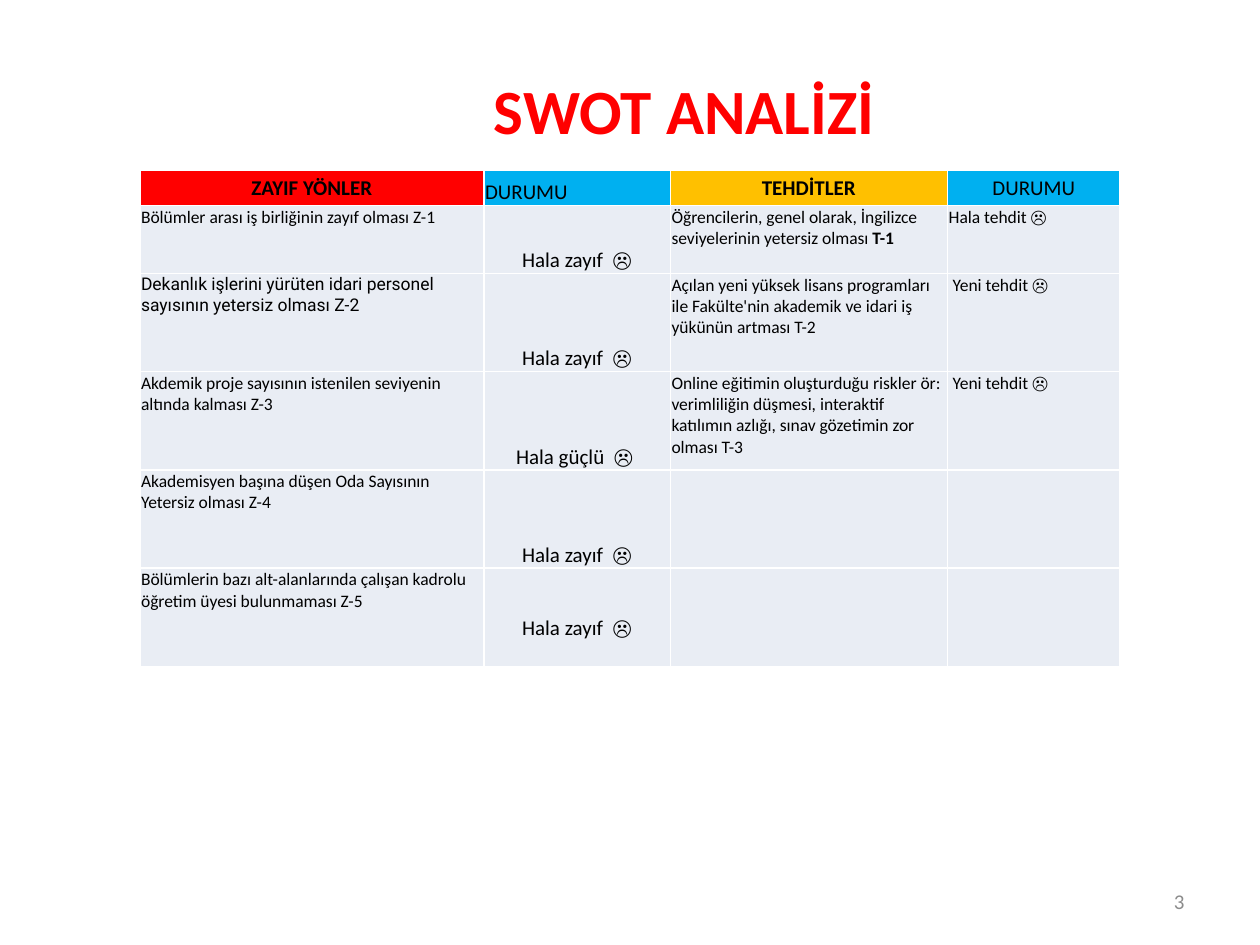
from dataclasses import dataclass

from lxml import etree
from pptx import Presentation
from pptx import util as u
from pptx.dml.color import RGBColor
from pptx.enum import text
from pptx.oxml import ns

COLORS = {
    "red": "FF0000", "blue": "00B0F0", "amber": "FFC000",
    "body": "E9EDF4", "border": "FFFFFF", "text": "000000", "number": "8C8C8C",
}
TOP, MIDDLE, BOTTOM = (text.MSO_ANCHOR.TOP, text.MSO_ANCHOR.MIDDLE,
                       text.MSO_ANCHOR.BOTTOM)
LEFT, CENTER, RIGHT = text.PP_ALIGN.LEFT, text.PP_ALIGN.CENTER, text.PP_ALIGN.RIGHT


@dataclass
class Entry:
    words: str
    bold_tail: str = ""
    size: int = 10
    bold: bool = False
    font: str = "Calibri"
    align: text.PP_ALIGN = LEFT
    anchor: text.MSO_ANCHOR = TOP
    fill: str = "body"
    bottom: float = 0


def header(words: str, fill: str, bold: bool = False, align=CENTER,
           anchor=MIDDLE) -> Entry:
    return Entry(words, size=12, bold=bold, align=align, anchor=anchor, fill=fill)


def status(words: str, bottom: float = 0) -> Entry:
    return Entry(words, size=12, align=CENTER, anchor=BOTTOM, bottom=bottom)


COLUMNS = [2.73, 1.48, 2.2, 1.37]
ROW_HEIGHTS = [0.28, 0.54] + [0.78] * 4
ROWS = [
    [header("ZAYIF YÖNLER", "red", bold=True),
     header("DURUMU", "blue", align=LEFT, anchor=BOTTOM),
     header("TEHDİTLER", "amber", bold=True),
     header("DURUMU", "blue")],
    [Entry("Bölümler arası iş birliğinin zayıf olması Z-1"),
     status("Hala zayıf  ☹"),
     Entry("Öğrencilerin, genel olarak, İngilizce seviyelerinin yetersiz olması ",
           bold_tail="T-1"),
     Entry("Hala tehdit ☹")],
    [Entry("Dekanlık işlerini yürüten idari personel sayısının yetersiz olması Z-2",
           font="Roboto"),
     status("Hala zayıf  ☹"),
     Entry("Açılan yeni yüksek lisans programları ile Fakülte'nin akademik ve "
           "idari iş yükünün artması T-2"),
     Entry(" Yeni tehdit ☹")],
    [Entry("Akdemik proje sayısının istenilen seviyenin altında kalması Z-3"),
     status("Hala güçlü  ☹ "),
     Entry("Online eğitimin oluşturduğu riskler ör: verimliliğin düşmesi, "
           "interaktif katılımın azlığı, sınav gözetimin zor olması T-3"),
     Entry(" Yeni tehdit ☹")],
    [Entry("Akademisyen başına düşen Oda Sayısının Yetersiz olması Z-4"),
     status("Hala zayıf  ☹"), Entry(""), Entry("")],
    [Entry("Bölümlerin bazı alt-alanlarında çalışan kadrolu öğretim üyesi "
           "bulunmaması Z-5"),
     status("Hala zayıf  ☹", bottom=0.2), Entry(""), Entry("")],
]


def style(para, size: int, color: str, font: str = "Calibri", bold: bool = False,
          align=LEFT) -> None:
    para.alignment = align
    para.font.size = u.Pt(size)
    para.font.name = font
    para.font.bold = bold
    para.font.color.rgb = RGBColor.from_string(COLORS[color])


def place(box, left: float, top: float, width: float, height: float) -> None:
    box.left, box.top = u.Inches(left), u.Inches(top)
    box.width, box.height = u.Inches(width), u.Inches(height)


def add_borders(cell) -> None:
    properties = cell._tc.get_or_add_tcPr()
    for side in ("a:lnL", "a:lnR", "a:lnT", "a:lnB"):
        line = etree.SubElement(properties, ns.qn(side), w=str(u.Pt(1)))
        solid = etree.SubElement(line, ns.qn("a:solidFill"))
        etree.SubElement(solid, ns.qn("a:srgbClr"), val=COLORS["border"])


def fill_cell(cell, entry: Entry) -> None:
    add_borders(cell)
    cell.fill.solid()
    cell.fill.fore_color.rgb = RGBColor.from_string(COLORS[entry.fill])
    cell.margin_left = cell.margin_right = cell.margin_top = u.Inches(0.01)
    cell.margin_bottom = u.Inches(entry.bottom)
    cell.vertical_anchor = entry.anchor
    para = cell.text_frame.paragraphs[0]
    if entry.words:
        para.add_run().text = entry.words
    if entry.bold_tail:
        span = para.add_run()
        span.text = entry.bold_tail
        span.font.bold = True
    style(para, entry.size, "text", entry.font, entry.bold, entry.align)


def main() -> None:
    deck = Presentation()
    deck.slide_width, deck.slide_height = u.Inches(10), u.Inches(7.5)
    page = deck.slides.add_slide(deck.slide_layouts[5])

    # Title
    title = page.shapes.title
    place(title, 1.61, 0.52, 7.64, 0.71)
    title.text_frame.text = "SWOT ANALİZİ"
    title.text_frame.vertical_anchor = TOP
    style(title.text_frame.paragraphs[0], 36, "red", bold=True, align=CENTER)

    # Weaknesses and threats table
    table = page.shapes.add_table(
        len(ROWS), len(COLUMNS), u.Inches(1.11), u.Inches(1.35),
        u.Inches(sum(COLUMNS)), u.Inches(sum(ROW_HEIGHTS))).table
    table.first_row = table.horz_banding = False
    for column, width in zip(table.columns, COLUMNS):
        column.width = u.Inches(width)
    for row, height, entries in zip(table.rows, ROW_HEIGHTS, ROWS):
        row.height = u.Inches(height)
        for cell, entry in zip(row.cells, entries):
            fill_cell(cell, entry)

    # Page number
    number = page.shapes.add_textbox(0, 0, 0, 0)
    place(number, 7.17, 6.95, 2.33, 0.4)
    frame = number.text_frame
    frame.word_wrap = True
    frame.vertical_anchor = MIDDLE
    frame.text = "3"
    style(frame.paragraphs[0], 12, "number", align=RIGHT)

    deck.save("out.pptx")


if __name__ == "__main__":
    main()
